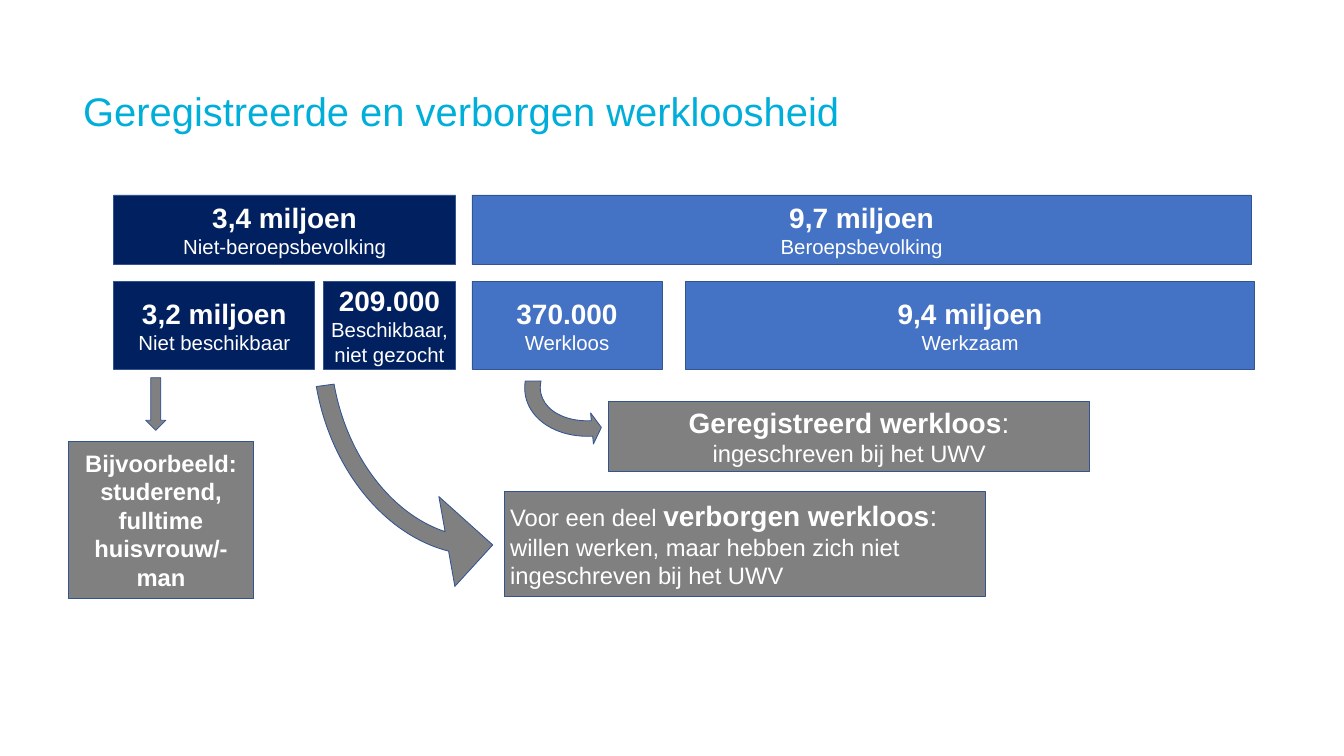
from pptx import Presentation
from pptx.dml.color import RGBColor
from pptx.enum.shapes import MSO_SHAPE
from pptx.enum.text import MSO_ANCHOR, PP_ALIGN
from pptx.util import Pt

HUES = {"title": "00AEDA", "navy": "002060", "blue": "4472C4",
        "grey": "808080", "edge": "325491", "white": "FFFFFF"}
BIG, MID, SMALL = 33, 28, 24
GAP = 7.2


def hue(name):
    return RGBColor.from_string(HUES[name])


def write(frame, paras, color="white", align=PP_ALIGN.CENTER, inset=GAP):
    """Fill a text frame; each paragraph is a list of (text, size, bold)."""
    frame.word_wrap = True
    frame.vertical_anchor = MSO_ANCHOR.MIDDLE
    frame.margin_left = frame.margin_right = Pt(inset)
    frame.margin_top = frame.margin_bottom = Pt(inset / 2)
    for i, runs in enumerate(paras):
        para = frame.add_paragraph() if i else frame.paragraphs[0]
        para.alignment = align
        for text, size, bold in runs:
            run = para.add_run()
            run.text = text
            font = run.font
            font.name, font.size, font.bold = "Arial", Pt(size), bold
            font.color.rgb = hue(color)


def draw(slide, kind, box, fill):
    shape = slide.shapes.add_shape(kind, *map(Pt, box))
    shape.shadow.inherit = False
    shape.fill.solid()
    shape.fill.fore_color.rgb = hue(fill)
    shape.line.color.rgb = hue("edge")
    shape.line.width = Pt(1)
    return shape


def card(slide, box, fill, paras, **style):
    shape = draw(slide, MSO_SHAPE.RECTANGLE, box, fill)
    write(shape.text_frame, paras, **style)


def swoop(slide, box, adjust):
    """Draw a curved arrow that runs down and to the right."""
    shape = draw(slide, MSO_SHAPE.CIRCULAR_ARROW, box, "grey")
    for i, value in enumerate(adjust):
        shape.adjustments[i] = value
    shape.rotation = 77.1
    shape._element.spPr.xfrm.set("flipV", "1")


def title(slide, box, text):
    frame = slide.shapes.add_textbox(*map(Pt, box)).text_frame
    write(frame, [[(text, 47, False)]], color="title",
          align=PP_ALIGN.LEFT, inset=0)


def groups(slide, box):
    """Draw the two rows of population figures."""
    left, top, _, high = box
    rows = [
        (0, 82, [(0, 402.5, "navy", "3,4 miljoen", "Niet-beroepsbevolking"),
                 (422, 918, "blue", "9,7 miljoen", "Beroepsbevolking")]),
        (101.5, high - 101.5,
         [(0, 237, "navy", "3,2 miljoen", "Niet beschikbaar"),
          (247, 155.5, "navy", "209.000", "Beschikbaar, niet gezocht"),
          (422, 224, "blue", "370.000", "Werkloos"),
          (674, 669.6, "blue", "9,4 miljoen", "Werkzaam")]),
    ]
    for y, tall, cells in rows:
        for x, wide, fill, count, label in cells:
            card(slide, (left + x, top + y, wide, tall), fill,
                 [[(count, BIG, True)], [(label, SMALL, False)]])


def example(slide, box):
    left, top, wide, high = box
    card(slide, (left, top + 75, wide, high - 75), "grey",
         [[("Bijvoorbeeld: studerend,", MID, True)],
          [("fulltime huisvrouw/-man", MID, True)]])
    draw(slide, MSO_SHAPE.DOWN_ARROW, (left + 91, top, 23.8, 62), "grey")


def listed(slide, box):
    left, top, wide, high = box
    card(slide, box, "grey",
         [[("Geregistreerd werkloos", BIG, True), (":", BIG, False)],
          [("ingeschreven bij het UWV", MID, False)]])
    swoop(slide, (left - 87, top - 120, 147, 191),
          (0.125, 6.77, 204.58, 154.46, 0.125))


def hidden(slide, box):
    left, top, wide, high = box
    card(slide, box, "grey",
         [[("Voor een deel ", MID, False), ("verborgen werkloos", BIG, True),
           (":", BIG, False)],
          [("willen werken, maar hebben zich niet ingeschreven bij het UWV",
            MID, False)]], align=PP_ALIGN.LEFT)
    swoop(slide, (left - 317.5, top - 361.5, 533.5, 430),
          (0.049, 8.85, 205.45, 158.84, 0.125))


def main():
    deck = Presentation()
    deck.slide_width, deck.slide_height = Pt(1583.28), Pt(890.64)
    slide = deck.slides.add_slide(deck.slide_layouts[6])
    title(slide, (98, 98, 1386, 65.5), "Geregistreerde en verborgen werkloosheid")
    groups(slide, (134, 229.7, 1343.6, 205.2))
    listed(slide, (717, 473, 566.6, 82))
    hidden(slide, (594, 579, 566.6, 124))
    example(slide, (80.6, 445, 218, 260))
    deck.save("out.pptx")


if __name__ == "__main__":
    main()
